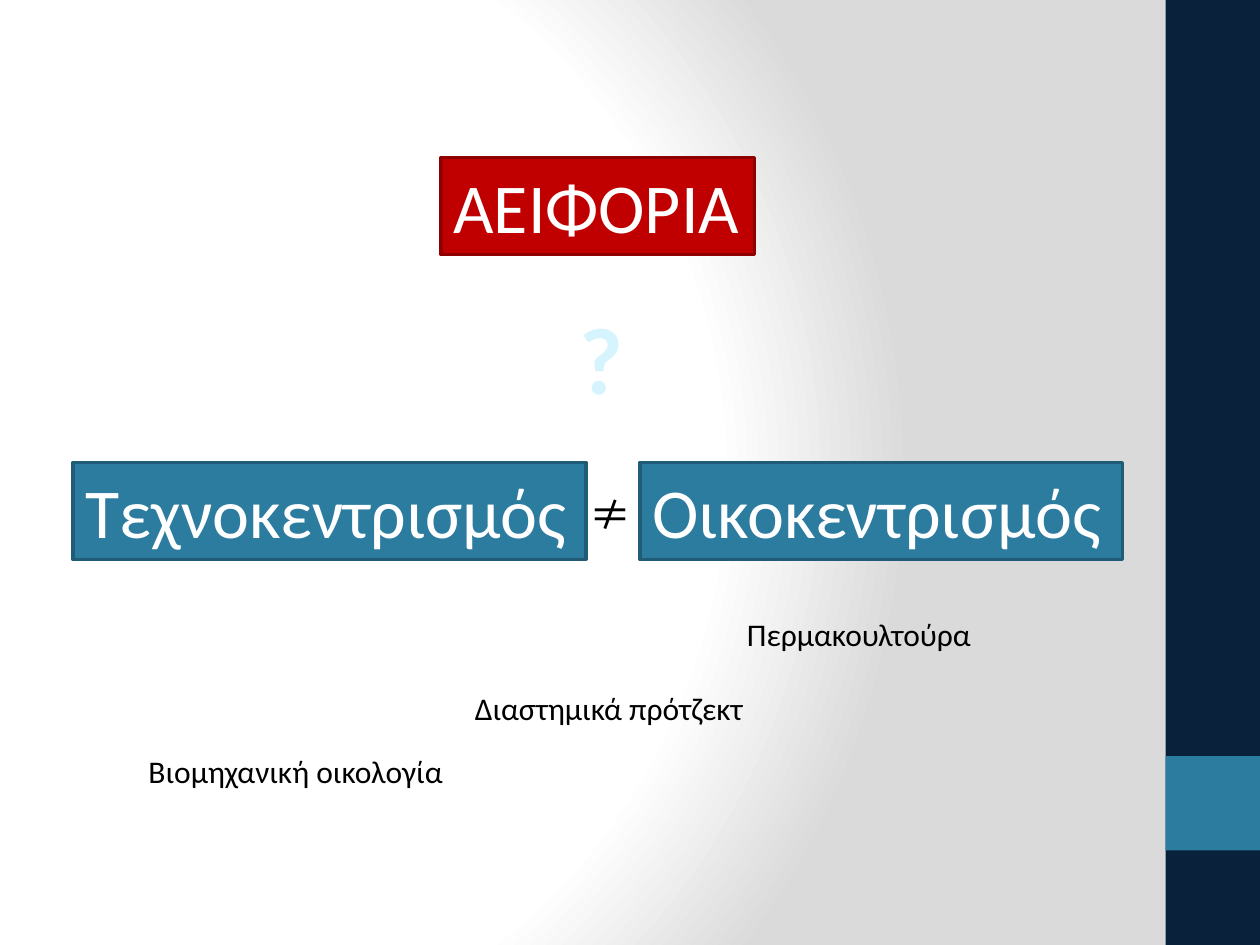
from dataclasses import dataclass
from typing import Optional

from lxml.etree import SubElement
from pptx import Presentation
from pptx.dml.color import RGBColor
from pptx.enum.shapes import MSO_SHAPE
from pptx.enum.text import MSO_ANCHOR, MSO_AUTO_SIZE, PP_ALIGN
from pptx.oxml import parse_xml
from pptx.oxml.ns import nsdecls, qn
from pptx.util import Inches, Pt


@dataclass(frozen=True)
class Theme:
    font: str = "Calibri"
    symbol_font: str = "Noto Sans CJK JP"
    white: str = "FFFFFF"
    grey: str = "DADADA"
    black: str = "000000"
    navy: str = "09213B"
    teal: str = "2C7C9F"
    teal_line: str = "215C76"
    red: str = "C00000"
    red_line: str = "8E0000"
    pale_blue: str = "D5F4FD"
    glyph_outline: str = "002144"
    concept_size: int = 40
    question_size: int = 54
    symbol_size: int = 24
    example_size: int = 18


THEME = Theme()


@dataclass(frozen=True)
class Box:
    left: float
    top: float
    width: float
    height: float

    def lengths(self) -> tuple:
        return tuple(map(Inches, (self.left, self.top, self.width, self.height)))


@dataclass(frozen=True)
class Label:
    text: str
    box: Box
    size: int
    color: str = THEME.black
    font: str = THEME.font
    bold: bool = False
    align: PP_ALIGN = PP_ALIGN.LEFT
    wrap: bool = False
    outline: Optional[str] = None


@dataclass(frozen=True)
class Concept:
    text: str
    box: Box
    fill: str
    line: str


SIDEBAR = [
    (Box(9.25, 0, 0.75, 7.5), THEME.navy),
    (Box(9.25, 6, 0.75, 0.75), THEME.teal),
]
CONCEPTS = [
    Concept("ΑΕΙΦΟΡΙΑ", Box(3.5, 1.25, 2.49, 0.77), THEME.red, THEME.red_line),
    Concept("Τεχνοκεντρισμός", Box(0.58, 3.67, 4.07, 0.77), THEME.teal, THEME.teal_line),
    Concept("Οικοκεντρισμός", Box(5.08, 3.67, 3.83, 0.77), THEME.teal, THEME.teal_line),
]
LABELS = [
    Label("?", Box(4.5, 2.33, 0.55, 1.01), THEME.question_size, THEME.pale_blue,
          bold=True, align=PP_ALIGN.CENTER, outline=THEME.glyph_outline),
    Label("≠", Box(4.58, 3.83, 0.54, 0.5), THEME.symbol_size, font=THEME.symbol_font),
    Label("Περμακουλτούρα", Box(5.83, 4.83, 2.25, 0.4), THEME.example_size, wrap=True),
    Label("Διαστημικά πρότζεκτ", Box(3.67, 5.42, 2.36, 0.4), THEME.example_size),
    Label("Βιομηχανική οικολογία", Box(1.08, 5.92, 2.59, 0.4), THEME.example_size),
]


def paint_background(slide) -> None:
    """Fill the background with a circular gradient, white to grey."""
    fill = slide.background.fill
    fill.gradient()
    gradient = slide.background._cSld.find(".//" + qn("a:gradFill"))
    for child in list(gradient):
        gradient.remove(child)
    stops = SubElement(gradient, qn("a:gsLst"))
    for percent, color in ((0, THEME.white), (75, THEME.white), (100, THEME.grey)):
        stop = SubElement(stops, qn("a:gs"), pos=str(percent * 1000))
        SubElement(stop, qn("a:srgbClr"), val=color)
    circle = SubElement(gradient, qn("a:path"), path="circle")
    SubElement(circle, qn("a:fillToRect"), l="20000", t="50000", r="100000", b="50000")


def add_rectangle(slide, box: Box, fill: str, line: Optional[str] = None):
    shape = slide.shapes.add_shape(MSO_SHAPE.RECTANGLE, *box.lengths())
    shape.shadow.inherit = False
    shape.fill.solid()
    shape.fill.fore_color.rgb = RGBColor.from_string(fill)
    if line:
        shape.line.color.rgb = RGBColor.from_string(line)
        shape.line.width = Pt(2)
    else:
        shape.line.fill.background()
    return shape


def write_text(shape, label: Label) -> None:
    frame = shape.text_frame
    frame_format = {
        "word_wrap": label.wrap,
        "auto_size": MSO_AUTO_SIZE.SHAPE_TO_FIT_TEXT,
        "vertical_anchor": MSO_ANCHOR.TOP,
    }
    for name, value in frame_format.items():
        setattr(frame, name, value)
    paragraph = frame.paragraphs[0]
    paragraph.alignment = label.align
    run = paragraph.add_run()
    run.text = label.text
    font_format = {"size": Pt(label.size), "bold": label.bold, "name": label.font}
    for name, value in font_format.items():
        setattr(run.font, name, value)
    run.font.color.rgb = RGBColor.from_string(label.color)
    properties = run._r.get_or_add_rPr()
    SubElement(properties, qn("a:ea"), typeface=label.font)
    if label.outline:
        properties.insert(0, parse_xml(
            f'<a:ln {nsdecls("a")} w="{Pt(1)}"><a:solidFill>'
            f'<a:srgbClr val="{label.outline}"/></a:solidFill></a:ln>'))


def add_concept(slide, concept: Concept) -> None:
    shape = add_rectangle(slide, concept.box, concept.fill, concept.line)
    write_text(shape, Label(concept.text, concept.box, THEME.concept_size, THEME.white))


def add_label(slide, label: Label) -> None:
    write_text(slide.shapes.add_textbox(*label.box.lengths()), label)


def main() -> None:
    presentation = Presentation()
    presentation.slide_width, presentation.slide_height = Inches(10), Inches(7.5)
    slide = presentation.slides.add_slide(presentation.slide_layouts[6])
    paint_background(slide)
    for box, color in SIDEBAR:
        add_rectangle(slide, box, color)
    for concept in CONCEPTS:
        add_concept(slide, concept)
    for label in LABELS:
        add_label(slide, label)
    presentation.save("out.pptx")


if __name__ == "__main__":
    main()
